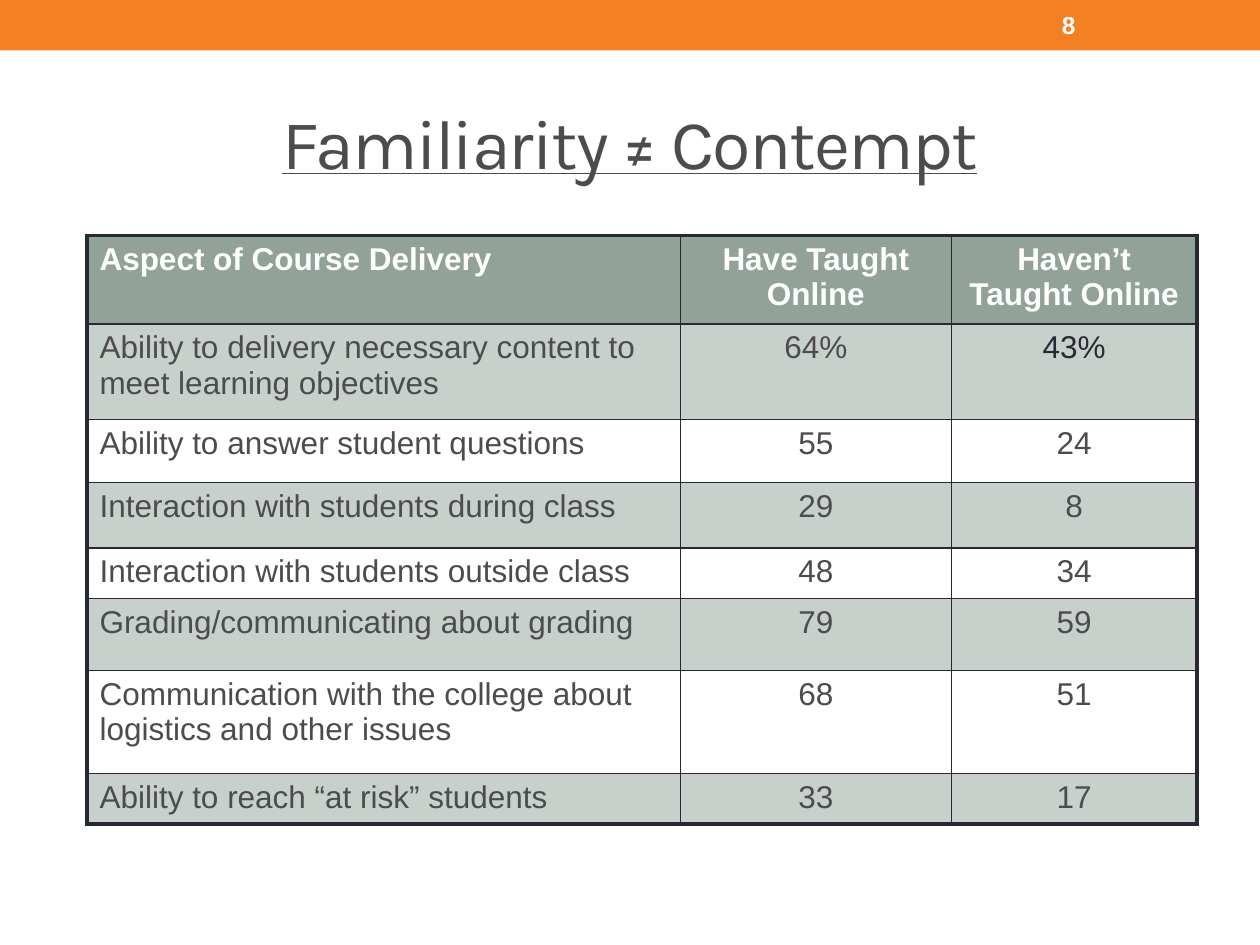
from lxml import etree
from pptx import Presentation
from pptx.dml.color import RGBColor
from pptx.enum.shapes import MSO_SHAPE
from pptx.enum.text import MSO_ANCHOR, PP_ALIGN
from pptx.oxml.ns import qn
from pptx.util import Inches, Pt

LEFT, CENTER = PP_ALIGN.LEFT, PP_ALIGN.CENTER
MIDDLE = MSO_ANCHOR.MIDDLE

ORANGE, SAGE, WHITE = "F48024", "93A299", "FFFFFF"
GRAY, DARK = "4C4C4C", "292934"
THIN, THICK = 1, 2.25

PAGE_NUMBER = "8"
TITLE = "Familiarity ≠ Contempt"
ROWS = [
    ("Aspect of Course Delivery", "Have Taught Online", "Haven’t Taught Online"),
    ("Ability to delivery necessary content to meet learning objectives", "64%", "43%"),
    ("Ability to answer student questions", "55", "24"),
    ("Interaction with students during class", "29", "8"),
    ("Interaction with students outside class", "48", "34"),
    ("Grading/communicating about grading", "79", "59"),
    ("Communication with the college about logistics and other issues", "68", "51"),
    ("Ability to reach “at risk” students", "33", "17"),
]
COLUMN_WIDTHS = [4.71, 2.15, 1.95]
ROW_HEIGHTS = [0.65, 0.76, 0.5, 0.52, 0.39, 0.57, 0.82, 0.38]
TABLE_LEFT, TABLE_TOP = 0.69, 1.87
DARK_CELL = (1, 2)


def color(hex_string):
    return RGBColor.from_string(hex_string)


def write(text_frame, text, size=18, font="Arial", fill=GRAY, bold=False,
          underline=False, align=LEFT, spacing=None):
    paragraph = text_frame.paragraphs[0]
    paragraph.alignment = align
    run = paragraph.add_run()
    run.text = text
    run.font.size = Pt(size)
    run.font.name = font
    run.font.bold = bold
    run.font.underline = underline
    run.font.color.rgb = color(fill)
    if spacing is not None:
        run.font._element.set("spc", str(spacing * 100))


def add_text(slide, left, top, width, height, text, **text_format):
    box = slide.shapes.add_textbox(Inches(left), Inches(top), Inches(width), Inches(height))
    box.text_frame.word_wrap = True
    box.text_frame.vertical_anchor = MIDDLE
    write(box.text_frame, text, **text_format)


def set_borders(cell, widths):
    """Draw the left, right, top and bottom borders; call before filling the cell."""
    properties = cell._tc.get_or_add_tcPr()
    for side, width in zip("LRTB", widths):
        line = etree.SubElement(properties, qn(f"a:ln{side}"), w=str(Pt(width)))
        fill = etree.SubElement(line, qn("a:solidFill"))
        etree.SubElement(fill, qn("a:srgbClr"), val=DARK)


def fill_cell(cell, row):
    """Solid header, then half-transparent bands on the odd rows."""
    if row and row % 2 == 0:
        cell.fill.background()
        return
    cell.fill.solid()
    cell.fill.fore_color.rgb = color(SAGE)
    if row:
        tint = cell._tc.tcPr.find(qn("a:solidFill")).find(qn("a:srgbClr"))
        etree.SubElement(tint, qn("a:alpha"), val="50000")


def add_results_table(slide):
    last_row, last_column = len(ROWS) - 1, len(COLUMN_WIDTHS) - 1
    table = slide.shapes.add_table(
        len(ROWS), len(COLUMN_WIDTHS), Inches(TABLE_LEFT), Inches(TABLE_TOP),
        Inches(sum(COLUMN_WIDTHS)), Inches(sum(ROW_HEIGHTS))).table
    for column, width in zip(table.columns, COLUMN_WIDTHS):
        column.width = Inches(width)
    for row, height in zip(table.rows, ROW_HEIGHTS):
        row.height = Inches(height)
    for row, texts in enumerate(ROWS):
        for column, text in enumerate(texts):
            cell = table.cell(row, column)
            outer_sides = (column == 0, column == last_column, row == 0, row == last_row)
            set_borders(cell, [THICK if outer else THIN for outer in outer_sides])
            fill_cell(cell, row)
            body_color = DARK if (row, column) == DARK_CELL else GRAY
            write(cell.text_frame, text, bold=row == 0,
                  fill=body_color if row else WHITE,
                  align=CENTER if column else LEFT)


def main():
    presentation = Presentation()
    presentation.slide_width, presentation.slide_height = Inches(10), Inches(7.5)
    slide = presentation.slides.add_slide(presentation.slide_layouts[6])

    banner = slide.shapes.add_shape(MSO_SHAPE.RECTANGLE, 0, 0, Inches(10), Inches(0.4))
    banner.shadow.inherit = False
    banner.fill.solid()
    banner.fill.fore_color.rgb = color(ORANGE)
    banner.line.fill.background()

    add_text(slide, 8.33, 0.02, 1.17, 0.36, PAGE_NUMBER, size=14, fill=WHITE, bold=True)
    add_text(slide, 0.5, 0.58, 9, 1.08, TITLE, size=40, font="Karla",
             underline=True, align=CENTER, spacing=-1)
    add_results_table(slide)
    presentation.save("out.pptx")


if __name__ == "__main__":
    main()
